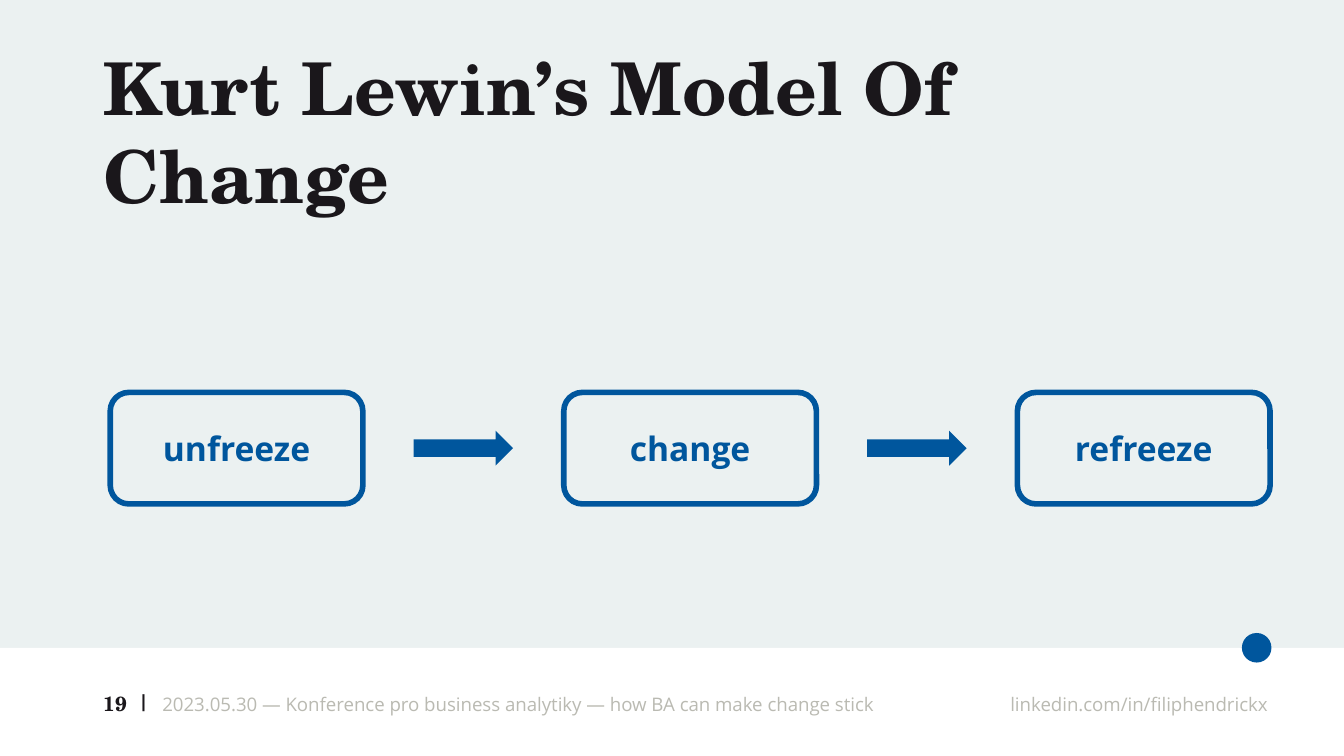
"""Build the slide on Kurt Lewin's three-step model of change."""
from pptx import Presentation
from pptx.dml.color import RGBColor
from pptx.enum.shapes import MSO_SHAPE
from pptx.enum.text import MSO_ANCHOR, PP_ALIGN
from pptx.util import Inches, Pt

LEFT, CENTER, RIGHT = PP_ALIGN.LEFT, PP_ALIGN.CENTER, PP_ALIGN.RIGHT
TOP, MIDDLE = MSO_ANCHOR.TOP, MSO_ANCHOR.MIDDLE
RECTANGLE, OVAL = MSO_SHAPE.RECTANGLE, MSO_SHAPE.OVAL
ROUNDED, ARROW = MSO_SHAPE.ROUNDED_RECTANGLE, MSO_SHAPE.RIGHT_ARROW

COLORS = {"background": "EBF1F1", "footer": "FFFFFF", "blue": "00569D",
          "ink": "1A171B", "grey": "BABAB2"}
SERIF, SANS = "TeX Gyre Schola", "Open Sans"
WIDE_INSETS, NUMBER_INSETS = (0.1, 0.1, 0.1, 0.1), (0.1, 0.05, 0.04, 0.05)

TITLE_STYLE = (SERIF, 39, "ink", True)
NUMBER_STYLE = (SERIF, 11, "ink", True)
FOOTER_STYLE = (SANS, 10, "grey", False)
STEP_STYLE = (SANS, 18, "blue", True)

STEPS = ["unfreeze", "change", "refreeze"]
TEXTS = [
    ("|", (0.88, 5.07, 0.32, 0.3), NUMBER_STYLE, CENTER, MIDDLE, NUMBER_INSETS),
    ("2023.05.30 — Konference pro business analytiky — how BA can make change stick",
     (1.11, 5.07, 7.24, 0.4), FOOTER_STYLE, LEFT, TOP, WIDE_INSETS),
    ("linkedin.com/in/filiphendrickx",
     (7.19, 5.07, 2.34, 0.4), FOOTER_STYLE, RIGHT, TOP, WIDE_INSETS),
    ("Kurt Lewin’s Model Of Change",
     (0.67, 0.22, 8.78, 0.94), TITLE_STYLE, LEFT, TOP, WIDE_INSETS),
    ("19", (0.67, 5.08, 0.4, 0.3), NUMBER_STYLE, LEFT, MIDDLE, NUMBER_INSETS),
]

WIDTH = 10
HEIGHT = WIDTH * 9 / 16
FOOTER_TOP, DOT, DOT_RIGHT = 4.82, 0.22, 9.46
ROW_LEFT, ROW_RIGHT, ROW_TOP = 0.82, 9.45, 2.92
STEP_WIDTH, STEP_HEIGHT = 1.88, 0.83
ARROW_WIDTH, ARROW_HEIGHT = 0.74, 0.26


def color(name):
    return RGBColor.from_string(COLORS[name])


def write(shape, text, style, align, anchor, insets):
    font_name, size, color_name, bold = style
    frame = shape.text_frame
    frame.word_wrap = True
    frame.vertical_anchor = anchor
    (frame.margin_left, frame.margin_top,
     frame.margin_right, frame.margin_bottom) = map(Inches, insets)
    frame.text = text
    paragraph = frame.paragraphs[0]
    paragraph.alignment = align
    font = paragraph.runs[0].font
    font.name, font.size, font.bold = font_name, Pt(size), bold
    font.color.rgb = color(color_name)


def add_shape(slide, kind, box, fill=None, line=None):
    shape = slide.shapes.add_shape(kind, *map(Inches, box))
    shape.shadow.inherit = False
    if fill:
        shape.fill.solid()
        shape.fill.fore_color.rgb = color(fill)
    else:
        shape.fill.background()
    if line:
        shape.line.color.rgb = color(line)
        shape.line.width = Pt(3)
    else:
        shape.line.fill.background()
    return shape


def add_steps(slide):
    pitch = (ROW_RIGHT - ROW_LEFT - STEP_WIDTH) / (len(STEPS) - 1)
    arrow_offset = (STEP_WIDTH + pitch - ARROW_WIDTH) / 2
    arrow_top = ROW_TOP + (STEP_HEIGHT - ARROW_HEIGHT) / 2
    for index, label in enumerate(STEPS):
        left = ROW_LEFT + index * pitch
        step = add_shape(slide, ROUNDED, (left, ROW_TOP, STEP_WIDTH, STEP_HEIGHT), line="blue")
        write(step, label, STEP_STYLE, CENTER, MIDDLE, WIDE_INSETS)
        if index < len(STEPS) - 1:
            add_shape(slide, ARROW, (left + arrow_offset, arrow_top, ARROW_WIDTH, ARROW_HEIGHT),
                      fill="blue")


def main():
    presentation = Presentation()
    presentation.slide_width, presentation.slide_height = Inches(WIDTH), Inches(HEIGHT)
    slide = presentation.slides.add_slide(presentation.slide_layouts[6])
    slide.background.fill.solid()
    slide.background.fill.fore_color.rgb = color("background")
    add_shape(slide, RECTANGLE, (0, FOOTER_TOP, WIDTH, HEIGHT - FOOTER_TOP), fill="footer")
    add_shape(slide, OVAL, (DOT_RIGHT - DOT, FOOTER_TOP - DOT / 2, DOT, DOT), fill="blue")
    for text, box, style, align, anchor, insets in TEXTS:
        write(slide.shapes.add_textbox(*map(Inches, box)), text, style, align, anchor, insets)
    add_steps(slide)
    presentation.save("out.pptx")


if __name__ == "__main__":
    main()
